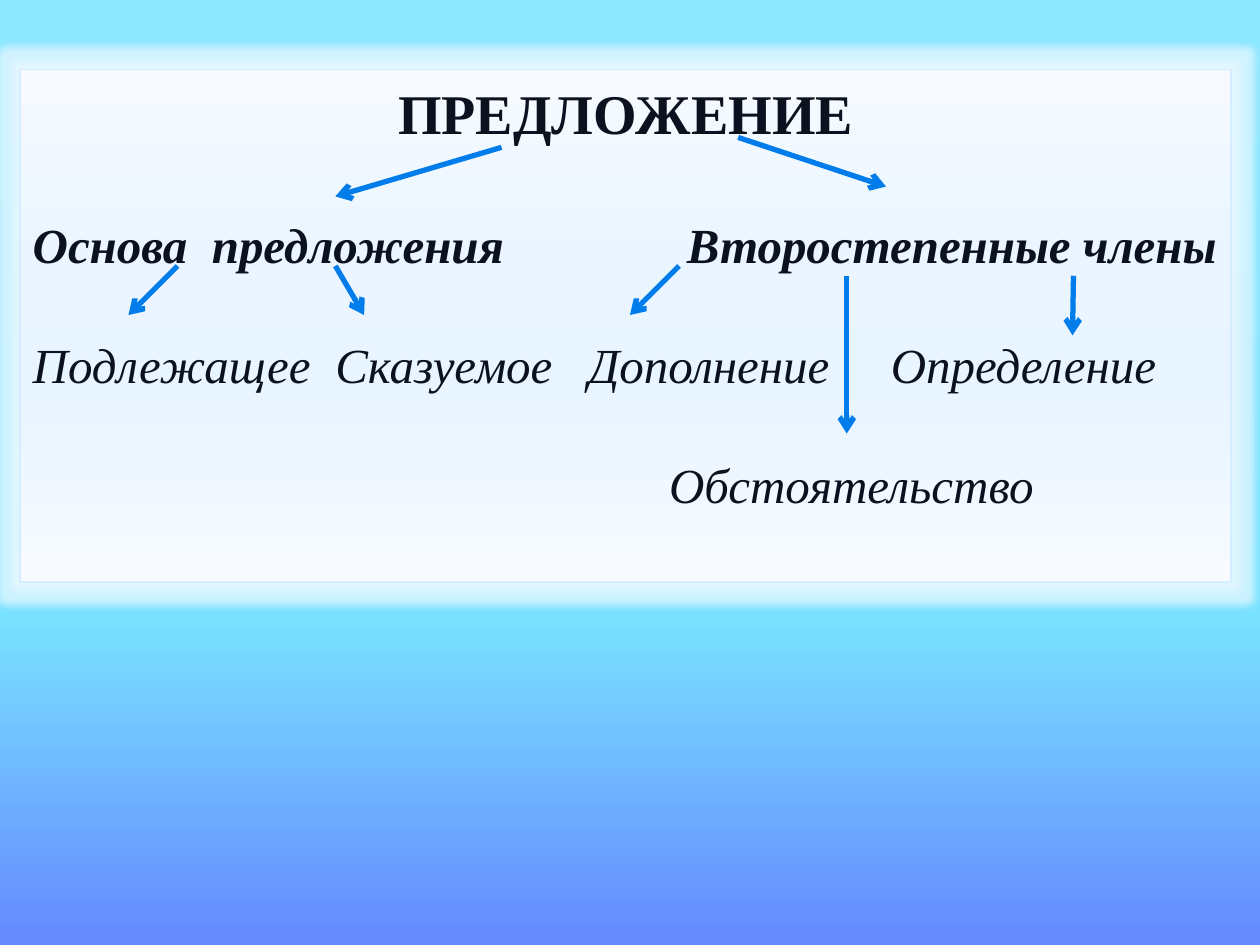
from dataclasses import dataclass

from lxml import etree
from pptx import Presentation
from pptx.dml.color import RGBColor
from pptx.enum import shapes, text
from pptx.oxml import ns
from pptx.util import Cm, Pt

INK = RGBColor(0x0C, 0x11, 0x1F)
ARROW_BLUE = RGBColor(0x00, 0x7D, 0xEA)
PANEL_EDGE = RGBColor(0xD6, 0xEC, 0xFF)
GLOW = RGBColor(0xE8, 0xF8, 0xFF)
SKY_STOPS = [
    (0, RGBColor(0x8B, 0xE6, 0xFF)),
    (65, RGBColor(0x79, 0xE2, 0xFF)),
    (100, RGBColor(0x65, 0x89, 0xFF)),
]
PANEL_STOPS = [
    (0, RGBColor(0xF6, 0xFA, 0xFF)),
    (40, RGBColor(0xEA, 0xF5, 0xFF)),
    (50, RGBColor(0xE8, 0xF4, 0xFF)),
    (65, RGBColor(0xEA, 0xF5, 0xFF)),
    (100, RGBColor(0xF7, 0xFB, 0xFF)),
]
FONT = "Times New Roman"
PANEL_LEFT, PANEL_TOP, PANEL_WIDTH, PANEL_HEIGHT = 0.41, 1.4, 24.41, 10.34


@dataclass(frozen=True)
class Row:
    words: str
    tabs: tuple[float, ...]
    bold: bool = False


@dataclass(frozen=True)
class Arrow:
    start: tuple[float, float]
    end: tuple[float, float]


ROWS = [
    Row("Основа  предложения\tВторостепенные члены", (13.19,), bold=True),
    Row("Подлежащее\tСказуемое\tДополнение\tОпределение", (6.1, 11.2, 17.3)),
    Row("\tОбстоятельство", (12.83,)),
]
ARROWS = [
    Arrow((10.11, 2.97), (6.76, 3.96)),
    Arrow((14.88, 2.77), (17.86, 3.76)),
    Arrow((3.58, 5.36), (2.59, 6.35)),
    Arrow((6.76, 5.36), (7.34, 6.35)),
    Arrow((13.69, 5.36), (12.7, 6.35)),
    Arrow((17.07, 5.56), (17.07, 8.74)),
    Arrow((21.64, 5.56), (21.62, 6.76)),
]


def add_child(parent, tag: str, **attributes: str):
    return etree.SubElement(parent, ns.qn(tag), attributes)


def set_gradient(fill, owner, stops: list[tuple[int, RGBColor]]) -> None:
    fill.gradient()
    fill.gradient_angle = 270
    stop_list = owner.find(".//" + ns.qn("a:gsLst"))
    for old_stop in list(stop_list):
        stop_list.remove(old_stop)
    for position, color in stops:
        stop = add_child(stop_list, "a:gs", pos=str(position * 1000))
        add_child(stop, "a:srgbClr", val=str(color))


def add_run(paragraph, words: str, size: int, bold: bool, italic: bool) -> None:
    run = paragraph.add_run()
    run.text = words
    run.font.name = FONT
    run.font.size = Pt(size)
    run.font.bold = bold
    run.font.italic = italic
    run.font.color.rgb = INK


def set_frame(frame, side: float, top: float) -> None:
    frame.word_wrap = True
    frame.auto_size = text.MSO_AUTO_SIZE.NONE
    frame.vertical_anchor = text.MSO_ANCHOR.TOP
    frame.margin_left = Cm(side)
    frame.margin_right = frame.margin_bottom = Cm(0)
    frame.margin_top = Cm(top)


def add_panel(slide):
    panel = slide.shapes.add_shape(
        shapes.MSO_SHAPE.RECTANGLE,
        Cm(PANEL_LEFT), Cm(PANEL_TOP), Cm(PANEL_WIDTH), Cm(PANEL_HEIGHT),
    )
    set_gradient(panel.fill, panel._element, PANEL_STOPS)
    panel.line.color.rgb = PANEL_EDGE
    panel.line.width = Pt(0.94)
    panel.shadow.inherit = False
    effects = panel._element.spPr.find(ns.qn("a:effectLst"))
    glow = add_child(effects, "a:glow", rad=str(int(Cm(0.3))))
    glow_color = add_child(glow, "a:srgbClr", val=str(GLOW))
    add_child(glow_color, "a:alpha", val="75000")
    set_frame(panel.text_frame, 0.25, 2.92)
    return panel


def add_row(paragraph, row: Row) -> None:
    paragraph.alignment = text.PP_ALIGN.LEFT
    tab_list = add_child(paragraph._p.get_or_add_pPr(), "a:tabLst")
    for position in row.tabs:
        add_child(tab_list, "a:tab", pos=str(int(Cm(position))), algn="l")
    add_run(paragraph, row.words, 28, row.bold, True)


def add_arrow(slide, arrow: Arrow) -> None:
    connector = slide.shapes.add_connector(
        shapes.MSO_CONNECTOR.STRAIGHT,
        *(Cm(value) for value in arrow.start + arrow.end),
    )
    connector.line.color.rgb = ARROW_BLUE
    connector.line.width = Pt(3)
    add_child(connector.line._get_or_add_ln(), "a:tailEnd", type="arrow")
    add_child(connector._element.spPr, "a:effectLst")


def main() -> None:
    presentation = Presentation()
    presentation.slide_width, presentation.slide_height = Cm(25.4), Cm(19.05)
    slide = presentation.slides.add_slide(presentation.slide_layouts[5])
    set_gradient(slide.background.fill, slide._element, SKY_STOPS)

    panel = add_panel(slide)
    paragraphs = panel.text_frame.paragraphs
    add_row(paragraphs[0], ROWS[0])
    for row in ROWS[1:]:
        paragraph = panel.text_frame.add_paragraph()
        paragraph.space_before = Pt(35)
        add_row(paragraph, row)

    title = slide.shapes.title
    title.left, title.top = Cm(PANEL_LEFT), Cm(1.59)
    title.width, title.height = Cm(PANEL_WIDTH), Cm(1.3)
    set_frame(title.text_frame, 0, 0)
    heading = title.text_frame.paragraphs[0]
    heading.alignment = text.PP_ALIGN.CENTER
    add_run(heading, "ПРЕДЛОЖЕНИЕ", 32, True, False)
    title._element.addprevious(panel._element)

    for arrow in ARROWS:
        add_arrow(slide, arrow)
    presentation.save("out.pptx")


if __name__ == "__main__":
    main()
